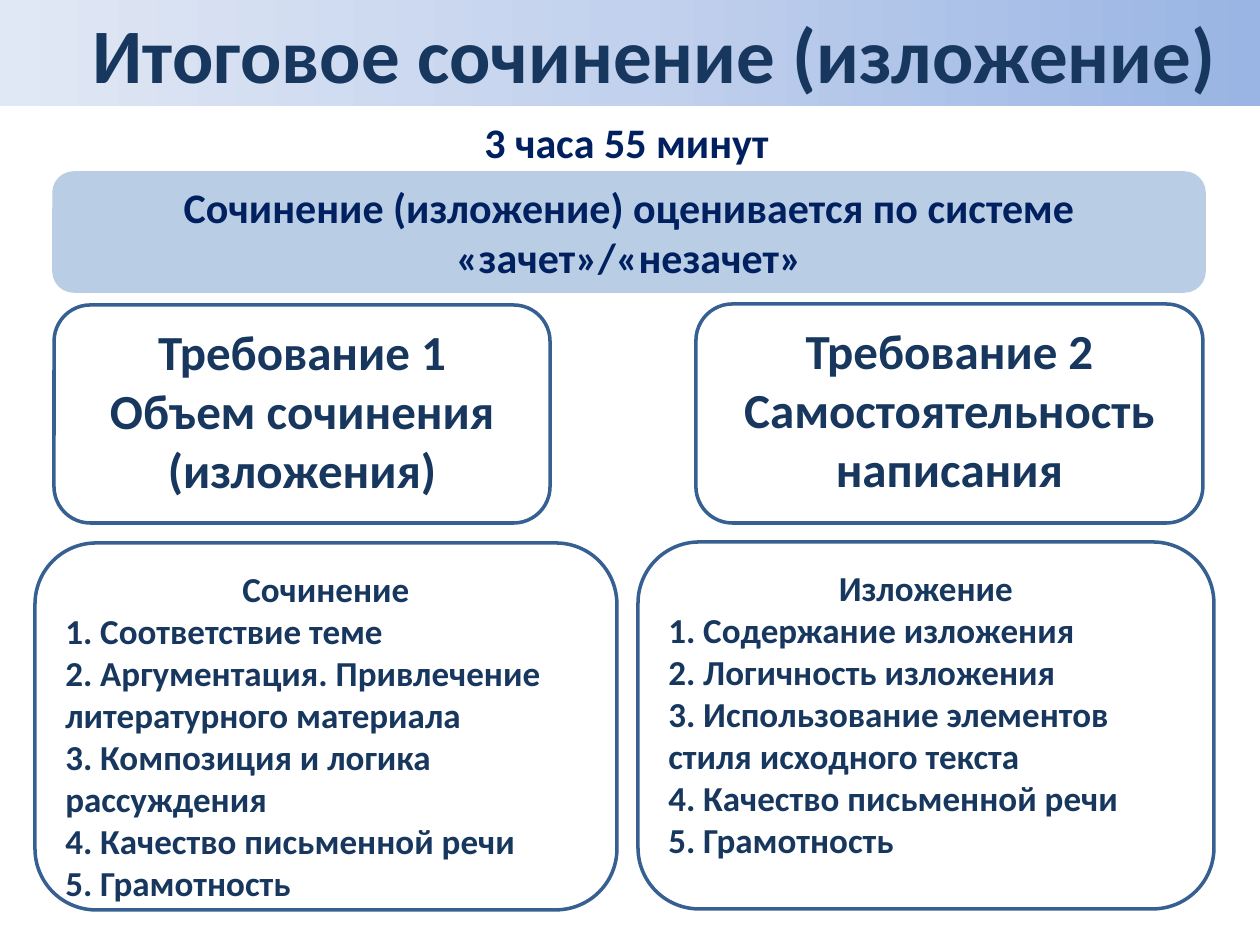
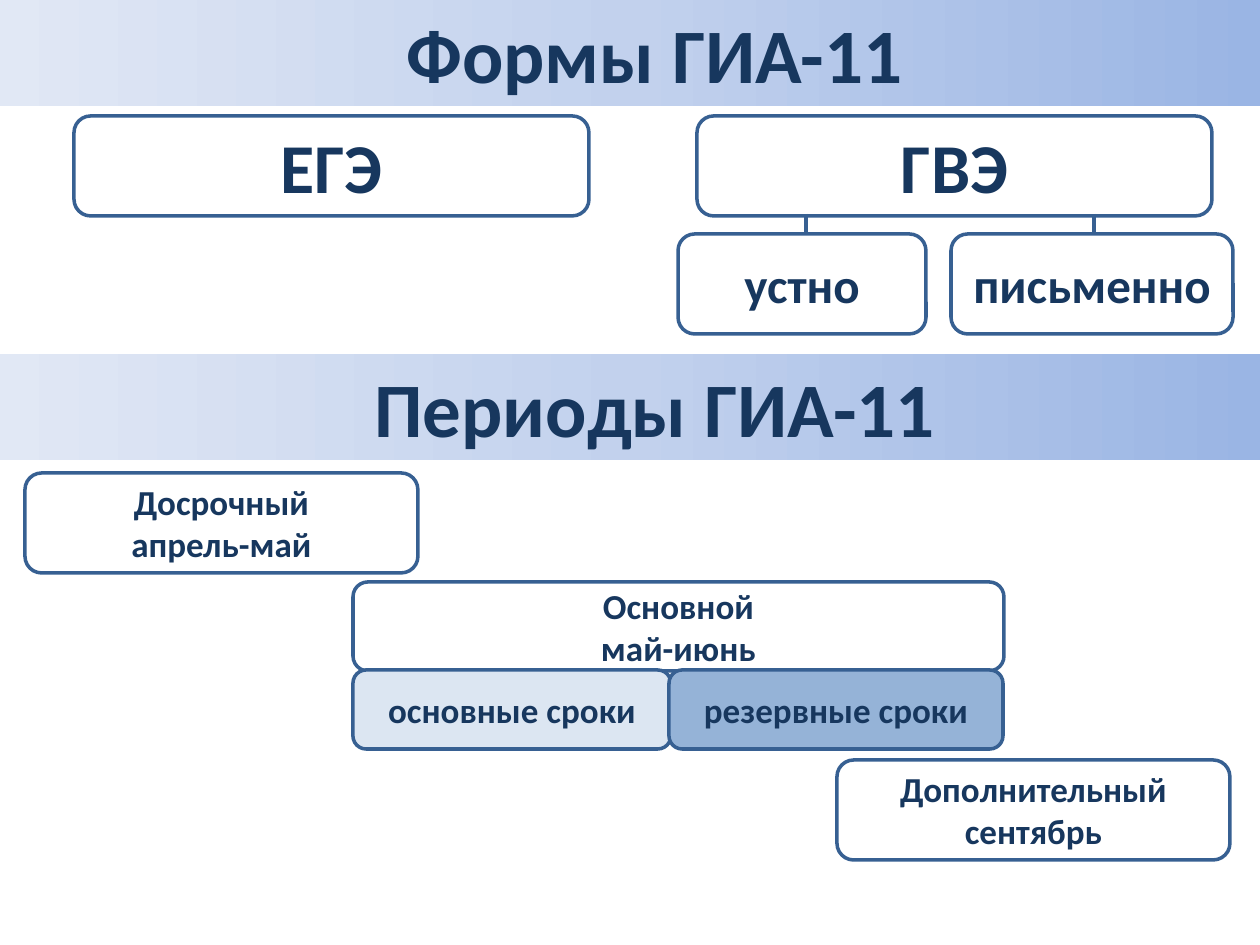
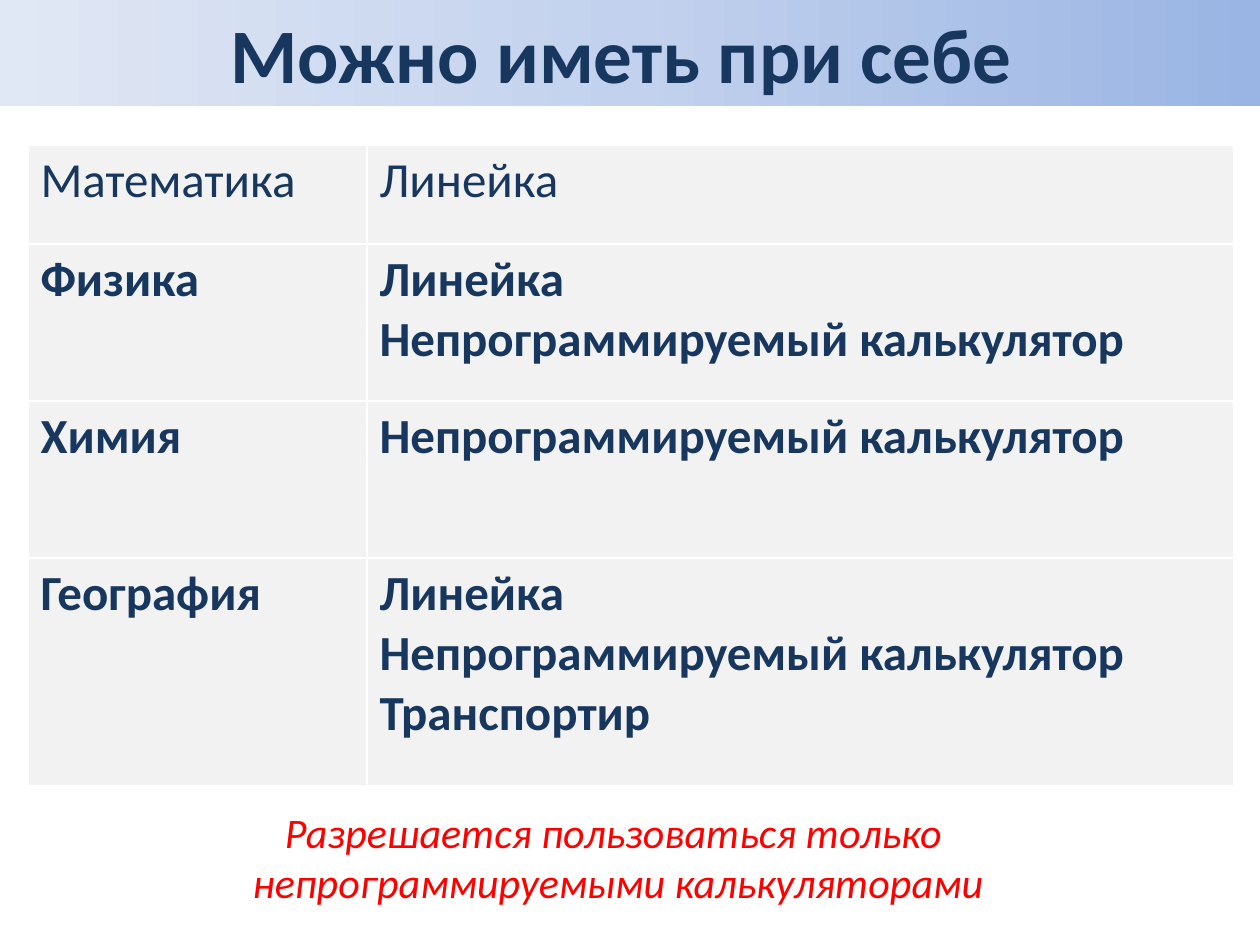
"""Build three slides on the final essay, exam forms and permitted items."""
from pptx import Presentation
from pptx import util as u
from pptx.dml.color import RGBColor
from pptx.enum import shapes, text
from pptx.oxml import parse_xml
from pptx.oxml.ns import nsdecls, qn
from lxml import etree

FONT = "Calibri"
PX = 914400 / 126
COLORS = {
    "ink": "17375E", "navy": "002060", "red": "FF0000", "border": "376092",
    "panel": "B9CDE5", "pale": "DCE6F2", "steel": "95B3D7", "cell": "F2F2F2",
    "white": "FFFFFF", "band_right": "9AB5E4", "band_middle": "C2D1ED",
    "band_left": "E1E8F5",
}
BAND_STOPS = ((0, "band_right"), (50, "band_middle"), (100, "band_left"))
BAND_HEIGHT = 106
TITLE_INDENT = 50
CENTER, LEFT = text.PP_ALIGN.CENTER, text.PP_ALIGN.LEFT
TOP, MIDDLE = text.MSO_ANCHOR.TOP, text.MSO_ANCHOR.MIDDLE

DURATION = "3 часа 55 минут"
GRADING = "Сочинение (изложение) оценивается по системе «зачет»/«незачет»"
REQUIREMENTS = [
    ((54, 305, 496, 218), ["Требование 1", "Объем сочинения (изложения)"]),
    ((696, 304, 507, 219), ["Требование 2", "Самостоятельность написания"]),
]
CRITERIA = [
    ((35, 543, 582, 367), "Сочинение", [
        "Соответствие теме",
        "Аргументация. Привлечение литературного материала",
        "Композиция и логика рассуждения",
        "Качество письменной речи",
        "Грамотность",
    ]),
    ((638, 542, 576, 367), "Изложение", [
        "Содержание изложения",
        "Логичность изложения",
        "Использование элементов стиля исходного текста",
        "Качество письменной речи",
        "Грамотность",
    ]),
]
EXAM_FORMS = [
    ((74, 116, 515, 100), "ЕГЭ", 40),
    ((697, 116, 515, 100), "ГВЭ", 40),
    ((678, 234, 248, 100), "устно", 28),
    ((951, 234, 282, 100), "письменно", 28),
]
BRANCHES = (806, 1094)
BRANCH_TOP, BRANCH_BOTTOM = 214, 234
PERIODS_TOP = 354
PERIODS = [
    ((25, 473, 393, 100), ["Досрочный", "апрель-май"], None),
    ((353, 582, 651, 89), ["Основной", "май-июнь"], None),
    ((353, 670, 318, 79), ["основные сроки"], "pale"),
    ((669, 670, 334, 79), ["резервные сроки"], "steel"),
    ((837, 760, 393, 100), ["Дополнительный", "сентябрь"], None),
]
RULER, CALCULATOR = "Линейка", "Непрограммируемый калькулятор"
PERMITTED = [
    ("Математика", [RULER]),
    ("Физика", [RULER, CALCULATOR]),
    ("Химия", [CALCULATOR]),
    ("География", [RULER, CALCULATOR + " Транспортир"]),
]
TABLE_PLACE = (28, 145, 1206, 641)
COLUMN_WIDTHS = (339, 867)
ROW_HEIGHTS = (99, 157, 157, 228)
NOTE = "Разрешается пользоваться только \vнепрограммируемыми калькуляторами"


def px(length):
    return u.Emu(round(length * PX))


def rgb(name):
    return RGBColor.from_string(COLORS[name])


def write(frame, lines, size, color="ink", align=CENTER, rest=None, **look):
    """Fill a frame; lines after the first use the alignment in rest, if given."""
    frame.word_wrap = True
    values = {"name": FONT, "size": u.Pt(size), "bold": True, **look}
    for index, line in enumerate(lines):
        para = frame.add_paragraph() if index else frame.paragraphs[0]
        para.text = line
        para.alignment = rest if index and rest is not None else align
        for span in para.runs:
            span.font.color.rgb = rgb(color)
            for key, value in values.items():
                setattr(span.font, key, value)


def add_box(page, place, lines, size, fill=None, line="border", anchor=MIDDLE, **look):
    box = page.shapes.add_shape(shapes.MSO_SHAPE.ROUNDED_RECTANGLE, *map(px, place))
    box.shadow.inherit = False
    if fill:
        box.fill.solid()
        box.fill.fore_color.rgb = rgb(fill)
    else:
        box.fill.background()
    box.line.color.rgb = rgb(line)
    box.line.width = u.Pt(2)
    box.text_frame.vertical_anchor = anchor
    write(box.text_frame, lines, size, **look)


def add_label(page, place, line, **look):
    label = page.shapes.add_textbox(*map(px, place))
    write(label.text_frame, [line], 24, **look)


def add_band(page, title, top=0, indent=TITLE_INDENT):
    band = page.shapes.add_shape(
        shapes.MSO_SHAPE.RECTANGLE, *map(px, (0, top, 1260, BAND_HEIGHT)))
    band.shadow.inherit = False
    band.line.fill.background()
    stops = "".join(
        f'<a:gs pos="{place * 1000}"><a:srgbClr val="{COLORS[name]}"/></a:gs>'
        for place, name in BAND_STOPS)
    gradient = parse_xml(
        f'<a:gradFill {nsdecls("a")}><a:gsLst>{stops}</a:gsLst>'
        '<a:lin ang="10800000" scaled="0"/></a:gradFill>')
    band._element.spPr.find(qn("a:prstGeom")).addnext(gradient)
    band.text_frame.vertical_anchor = TOP
    write(band.text_frame, [title], 44)
    if indent:
        properties = band.text_frame.paragraphs[0]._p.get_or_add_pPr()
        properties.set("marL", str(px(indent)))
        properties.set("indent", "0")


def add_branch(page, x):
    branch = page.shapes.add_connector(
        shapes.MSO_CONNECTOR.STRAIGHT, *map(px, (x, BRANCH_TOP, x, BRANCH_BOTTOM)))
    branch.line.color.rgb = rgb("border")
    branch.line.width = u.Pt(2.75)
    etree.SubElement(branch._element.spPr, qn("a:effectLst"))


def style_cell(cell):
    cell.fill.solid()
    cell.fill.fore_color.rgb = rgb("cell")
    for index, side in enumerate("LRTB"):
        edge = parse_xml(
            f'<a:ln{side} {nsdecls("a")} w="12700"><a:solidFill>'
            f'<a:srgbClr val="{COLORS["white"]}"/></a:solidFill></a:ln{side}>')
        cell._tc.get_or_add_tcPr().insert(index, edge)


def add_permitted_table(page):
    table = page.shapes.add_table(
        len(PERMITTED), len(COLUMN_WIDTHS), *map(px, TABLE_PLACE)).table
    table.first_row = table.horz_banding = False
    for column, width in zip(table.columns, COLUMN_WIDTHS):
        column.width = px(width)
    for index, (subject, items) in enumerate(PERMITTED):
        table.rows[index].height = px(ROW_HEIGHTS[index])
        for cell, lines in zip(table.rows[index].cells, ([subject], items)):
            style_cell(cell)
            write(cell.text_frame, lines, 28, align=LEFT, bold=index > 0)


def build_essay(page):
    add_band(page, "Итоговое сочинение (изложение)")
    add_label(page, (21, 110, 1211, 63), DURATION, color="navy")
    add_box(page, (54, 173, 1150, 118), [GRADING], 24,
            fill="panel", line="panel", color="navy")
    for place, lines in REQUIREMENTS:
        add_box(page, place, lines, 28, anchor=TOP)
    for place, heading, items in CRITERIA:
        numbered = [f"{number}. {item}" for number, item in enumerate(items, 1)]
        add_box(page, place, [heading, *numbered], 20, anchor=TOP, rest=LEFT)


def build_forms(page):
    for place, name, size in EXAM_FORMS:
        add_box(page, place, [name], size)
    for x in BRANCHES:
        add_branch(page, x)
    add_band(page, "Формы ГИА-11")
    add_band(page, "Периоды ГИА-11", PERIODS_TOP)
    for place, lines, fill in PERIODS:
        add_box(page, place, lines, 20, fill=fill)


def build_permitted(page):
    add_band(page, "Можно иметь при себе ", indent=0)
    add_permitted_table(page)
    add_label(page, (3, 800, 1230, 129), NOTE, color="red", bold=False, italic=True)


def main():
    deck = Presentation()
    deck.slide_width, deck.slide_height = px(1260), px(945)
    for build in (build_essay, build_forms, build_permitted):
        build(deck.slides.add_slide(deck.slide_layouts[6]))
    deck.save("out.pptx")


if __name__ == "__main__":
    main()
